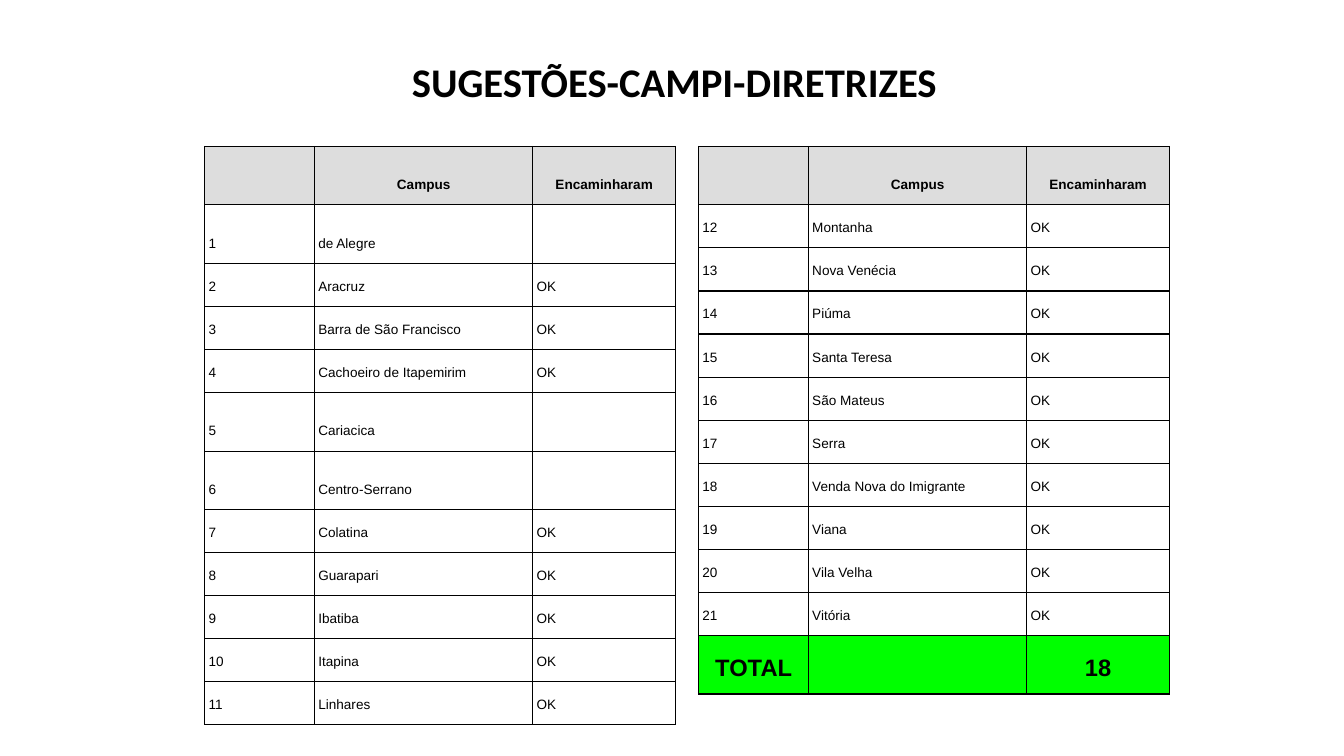
import pptx
import pptx.util
import pptx.dml.color
import pptx.enum.text
import pptx.oxml
import pptx.oxml.ns

Inches = pptx.util.Inches
Pt = pptx.util.Pt
ALIGN = pptx.enum.text.PP_ALIGN
ANCHOR = pptx.enum.text.MSO_ANCHOR

COLORS = {"text": "000000", "border": "000000", "header": "DDDDDD",
          "body": "FFFFFF", "total": "00FF00"}
COL_WIDTHS = [0.9, 1.79, 1.17]
ROW_HEIGHT, TALL_ROW_HEIGHT = 0.34, 0.48
HEADER = ["", "Campus", "Encaminharam"]
TOTAL = ["TOTAL", "", "18"]
CAMPUSES = ["de Alegre", "Aracruz", "Barra de São Francisco",
            "Cachoeiro de Itapemirim", "Cariacica", "Centro-Serrano",
            "Colatina", "Guarapari", "Ibatiba", "Itapina", "Linhares",
            "Montanha", "Nova Venécia", "Piúma", "Santa Teresa", "São Mateus",
            "Serra", "Venda Nova do Imigrante", "Viana", "Vila Velha",
            "Vitória"]
PENDING = {"de Alegre", "Cariacica", "Centro-Serrano"}
LEFT_COUNT = 11


def rgb(name):
    return pptx.dml.color.RGBColor.from_string(COLORS[name])


def write(p, text, font, size, bold, align, spacing):
    p.alignment = align
    p.line_spacing = spacing
    r = p.add_run()
    r.text = text
    r.font.name = font
    r.font.size = Pt(size)
    r.font.bold = bold
    r.font.color.rgb = rgb("text")


def add_title(slide, text):
    sp = slide.shapes.add_textbox(Inches(1.58), Inches(0.17), Inches(7.9), Inches(1.03))
    tf = sp.text_frame
    tf.word_wrap = True
    tf.vertical_anchor = ANCHOR.MIDDLE
    tf.margin_left = tf.margin_right = tf.margin_top = tf.margin_bottom = 0
    write(tf.paragraphs[0], text, "Calibri", 24, True, ALIGN.CENTER, 0.93)


def add_borders(cell):
    tc_pr = cell._tc.get_or_add_tcPr()
    for side in ("lnL", "lnR", "lnT", "lnB"):
        tc_pr.append(pptx.oxml.parse_xml(
            f'<a:{side} {pptx.oxml.ns.nsdecls("a")} w="{Pt(0.75)}"><a:solidFill>'
            f'<a:srgbClr val="{COLORS["border"]}"/></a:solidFill></a:{side}>'))


def fill_cell(cell, text, kind):
    add_borders(cell)
    cell.fill.solid()
    cell.fill.fore_color.rgb = rgb(kind)
    cell.vertical_anchor = ANCHOR.BOTTOM
    cell.margin_left = cell.margin_right = Inches(0.03)
    if text:
        cell.margin_top = cell.margin_bottom = Inches(0.1)
        is_body = kind == "body"
        write(cell.text_frame.paragraphs[0], text, "Arial",
              14 if kind == "total" else 8, not is_body,
              ALIGN.LEFT if is_body else ALIGN.CENTER, 1.15)


def add_campus_table(slide, left, rows):
    """Add a table from (kind, texts) rows; a row with an empty cell is tall."""
    heights = [ROW_HEIGHT if all(texts) else TALL_ROW_HEIGHT for _, texts in rows]
    table = slide.shapes.add_table(
        len(rows), len(COL_WIDTHS), Inches(left), Inches(1.2),
        Inches(sum(COL_WIDTHS)), Inches(sum(heights))).table
    table.first_row = table.horz_banding = False
    for col, width in zip(table.columns, COL_WIDTHS):
        col.width = Inches(width)
    for row, height, (kind, texts) in zip(table.rows, heights, rows):
        row.height = Inches(height)
        for cell, text in zip(row.cells, texts):
            fill_cell(cell, text, kind)


def main():
    prs = pptx.Presentation()
    prs.slide_width, prs.slide_height = Inches(11.02), Inches(6.2)
    slide = prs.slides.add_slide(prs.slide_layouts[6])
    add_title(slide, "SUGESTÕES-CAMPI-DIRETRIZES")

    header = [("header", HEADER)]
    body = [("body", [str(number), campus, "" if campus in PENDING else "OK"])
            for number, campus in enumerate(CAMPUSES, 1)]
    add_campus_table(slide, 1.68, header + body[:LEFT_COUNT])
    add_campus_table(slide, 5.73, header + body[LEFT_COUNT:] + [("total", TOTAL)])
    prs.save("out.pptx")


if __name__ == "__main__":
    main()
